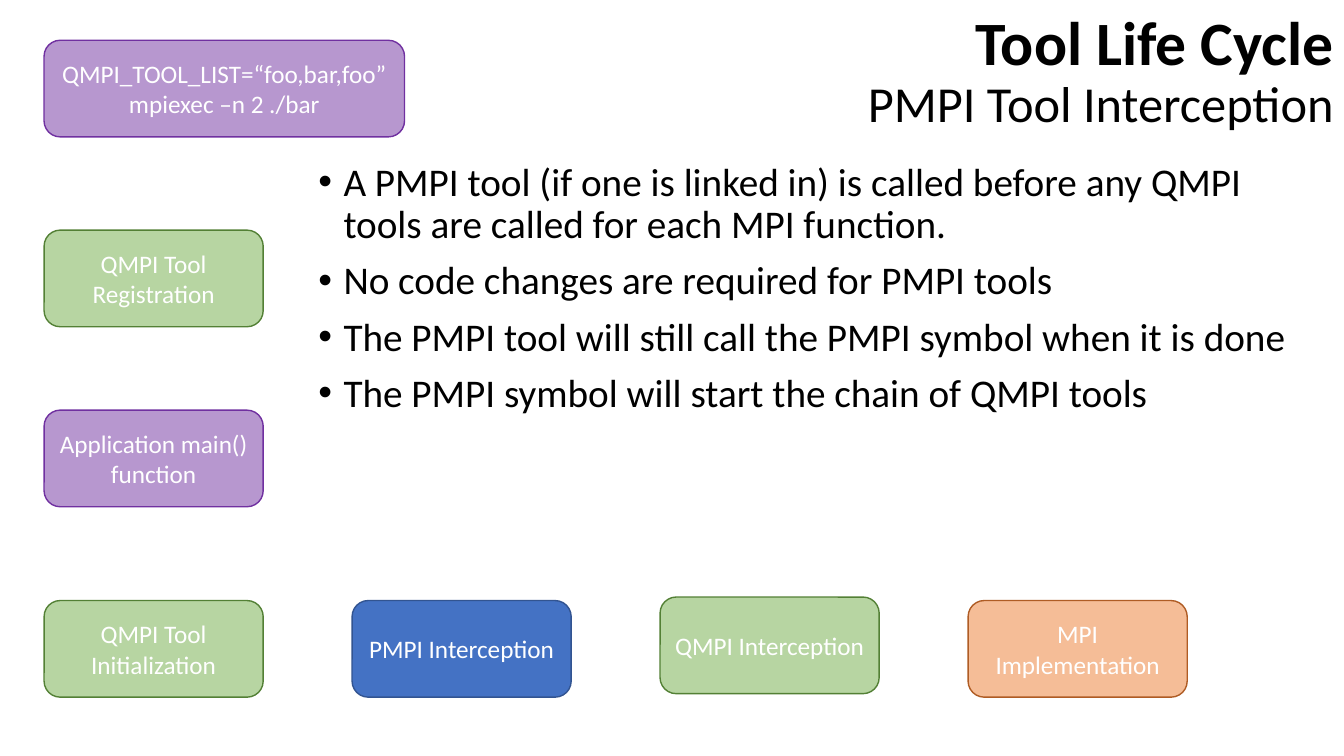
import pptx
import pptx.dml.color
import pptx.enum.shapes
import pptx.enum.text
import pptx.oxml
import pptx.oxml.ns
import pptx.util
from pptx.util import Pt

BLACK = pptx.dml.color.RGBColor(0x00, 0x00, 0x00)
WHITE = pptx.dml.color.RGBColor(0xFF, 0xFF, 0xFF)
PURPLE = pptx.dml.color.RGBColor(0x70, 0x30, 0xA0)
GREEN = pptx.dml.color.RGBColor(0x70, 0xAD, 0x47)
DARK_GREEN = pptx.dml.color.RGBColor(0x53, 0x80, 0x35)
BLUE = pptx.dml.color.RGBColor(0x44, 0x72, 0xC4)
DARK_BLUE = pptx.dml.color.RGBColor(0x32, 0x54, 0x91)
ORANGE = pptx.dml.color.RGBColor(0xED, 0x7D, 0x31)
DARK_ORANGE = pptx.dml.color.RGBColor(0xAF, 0x5C, 0x24)

FONT = "Calibri"
STAGE_WIDTH, STAGE_HEIGHT = 156.5, 69
COLUMNS = [31.5 + 220 * column for column in range(4)]
BOTTOM = 429

presentation = pptx.Presentation()
presentation.slide_width = Pt(960)
presentation.slide_height = Pt(540)
slide = presentation.slides.add_slide(presentation.slide_layouts[6])

# Title
title = slide.shapes.add_textbox(Pt(132), Pt(0), Pt(828), Pt(104.4))
title.text_frame.word_wrap = True
title.text_frame.vertical_anchor = pptx.enum.text.MSO_ANCHOR.MIDDLE
paragraph = title.text_frame.paragraphs[0]
paragraph.alignment = pptx.enum.text.PP_ALIGN.RIGHT
paragraph.line_spacing = 0.9
paragraph.font.name = FONT
paragraph.font.color.rgb = BLACK
heading = paragraph.add_run()
heading.text = "Tool Life Cycle"
heading.font.size = Pt(44)
heading.font.bold = True
paragraph.add_line_break()
subheading = paragraph.add_run()
subheading.text = "PMPI Tool Interception"
subheading.font.size = Pt(36)

# Bullets
points = [
    "A PMPI tool (if one is linked in) is called before any QMPI tools are called for each MPI function.",
    "No code changes are required for PMPI tools",
    "The PMPI tool will still call the PMPI symbol when it is done",
    "The PMPI symbol will start the chain of QMPI tools",
]
body = slide.shapes.add_textbox(Pt(220.3), Pt(112.3), Pt(723), Pt(312))
body.text_frame.word_wrap = True
for index, point in enumerate(points):
    paragraph = body.text_frame.paragraphs[0] if index == 0 else body.text_frame.add_paragraph()
    paragraph.text = point
    paragraph.line_spacing = 0.9
    paragraph.space_before = Pt(10)
    paragraph.font.name = FONT
    paragraph.font.size = Pt(28)
    paragraph.font.color.rgb = BLACK
    properties = paragraph._p.get_or_add_pPr()
    properties.set("marL", str(Pt(18)))
    properties.set("indent", str(Pt(-18)))
    namespace = pptx.oxml.ns.nsdecls("a")
    bullet_font = pptx.oxml.parse_xml(f'<a:buFont {namespace} typeface="Arial"/>')
    bullet = pptx.oxml.parse_xml(f'<a:buChar {namespace} char="•"/>')
    properties.insert_element_before(bullet_font, "a:defRPr")
    properties.insert_element_before(bullet, "a:defRPr")

# Life cycle stages: text, left, top, width, fill, line, opacity in percent
stages = [
    ("QMPI_TOOL_LIST=“foo,bar,foo” mpiexec –n 2 ./bar", COLUMNS[0], 28.8, 257.5, PURPLE, PURPLE, 50),
    ("QMPI Tool Registration", COLUMNS[0], 164.4, STAGE_WIDTH, GREEN, DARK_GREEN, 50),
    ("Application main() function", COLUMNS[0], 293, STAGE_WIDTH, PURPLE, PURPLE, 50),
    ("QMPI Tool Initialization", COLUMNS[0], BOTTOM, STAGE_WIDTH, GREEN, DARK_GREEN, 50),
    ("PMPI Interception", COLUMNS[1], BOTTOM, STAGE_WIDTH, BLUE, DARK_BLUE, 100),
    ("QMPI Interception", COLUMNS[2], 426.5, STAGE_WIDTH, GREEN, DARK_GREEN, 50),
    ("MPI Implementation", COLUMNS[3], BOTTOM, STAGE_WIDTH, ORANGE, DARK_ORANGE, 50),
]
for text, left, top, width, fill, line, opacity in stages:
    stage = slide.shapes.add_shape(
        pptx.enum.shapes.MSO_SHAPE.ROUNDED_RECTANGLE, Pt(left), Pt(top), Pt(width), Pt(STAGE_HEIGHT))
    stage.shadow.inherit = False
    stage.fill.solid()
    stage.fill.fore_color.rgb = fill
    if opacity < 100:
        color = stage._element.spPr.find(pptx.oxml.ns.qn("a:solidFill"))[0]
        color.append(pptx.oxml.parse_xml(
            f'<a:alpha {pptx.oxml.ns.nsdecls("a")} val="{opacity * 1000}"/>'))
    stage.line.color.rgb = line
    stage.line.width = Pt(1)
    stage.text_frame.word_wrap = True
    stage.text_frame.vertical_anchor = pptx.enum.text.MSO_ANCHOR.MIDDLE
    paragraph = stage.text_frame.paragraphs[0]
    paragraph.text = text
    paragraph.alignment = pptx.enum.text.PP_ALIGN.CENTER
    paragraph.font.name = FONT
    paragraph.font.size = Pt(18)
    paragraph.font.color.rgb = WHITE

presentation.save("out.pptx")
